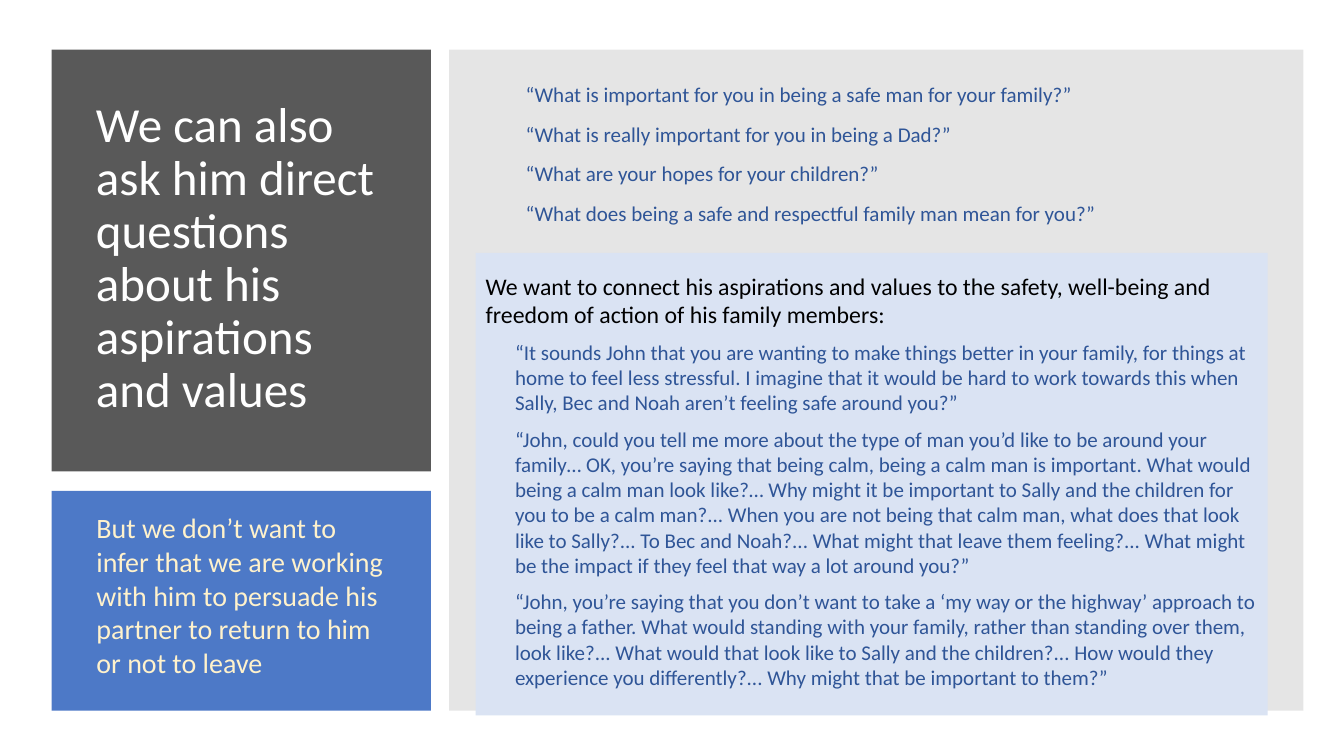
"""Build a slide on asking a man direct questions about his aspirations and values."""
from lxml import etree
from pptx import Presentation
from pptx.dml.color import RGBColor
from pptx.enum.shapes import MSO_SHAPE
from pptx.enum.text import MSO_ANCHOR
from pptx.oxml.ns import qn
from pptx.util import Cm, Pt

RECTANGLE = MSO_SHAPE.RECTANGLE
TOP, MIDDLE = MSO_ANCHOR.TOP, MSO_ANCHOR.MIDDLE

WHITE = RGBColor(0xFF, 0xFF, 0xFF)
BLACK = RGBColor(0x00, 0x00, 0x00)
CHARCOAL = RGBColor(0x59, 0x59, 0x59)
GREY = RGBColor(0x80, 0x80, 0x80)
BLUE = RGBColor(0x44, 0x72, 0xC4)
PALE_BLUE = RGBColor(0xDA, 0xE3, 0xF3)
DARK_BLUE = RGBColor(0x2F, 0x55, 0x97)
CREAM = RGBColor(0xFF, 0xF2, 0xCC)

TITLE = "We can also ask him direct questions about his aspirations and values"
CAUTION = (
    "But we don’t want to infer that we are working with him to persuade "
    "his partner to return to him or not to leave"
)
QUESTIONS = [
    "“What is important for you in being a safe man for your family?”",
    "“What is really important for you in being a Dad?”",
    "“What are your hopes for your children?”",
    "“What does being a safe and respectful family man mean for you?”",
]
PURPOSE = (
    "We want to connect his aspirations and values to the safety, well-being "
    "and freedom of action of his family members:"
)
EXAMPLES = [
    "“It sounds John that you are wanting to make things better in your family, "
    "for things at home to feel less stressful. I imagine that it would be hard to "
    "work towards this when Sally, Bec and Noah aren’t feeling safe around you?”",
    "“John, could you tell me more about the type of man you’d like to be around "
    "your family… OK, you’re saying that being calm, being a calm man is important. "
    "What would being a calm man look like?… Why might it be important to Sally and "
    "the children for you to be a calm man?... When you are not being that calm man, "
    "what does that look like to Sally?... To Bec and Noah?... What might that leave "
    "them feeling?... What might be the impact if they feel that way a lot around you?”",
    "“John, you’re saying that you don’t want to take a ‘my way or the highway’ "
    "approach to being a father. What would standing with your family, rather than "
    "standing over them, look like?... What would that look like to Sally and the "
    "children?... How would they experience you differently?... Why might that be "
    "important to them?”",
]

deck = Presentation()
deck.slide_width, deck.slide_height = Cm(33.87), Cm(19.05)
page = deck.slides.add_slide(deck.slide_layouts[6])


def add_panel(left, top, width, height, color, opacity=100):
    panel = page.shapes.add_shape(RECTANGLE, Cm(left), Cm(top), Cm(width), Cm(height))
    panel.shadow.inherit = False
    panel.line.fill.background()
    panel.fill.solid()
    panel.fill.fore_color.rgb = color
    if opacity < 100:
        tint = panel.fill._xPr.find(".//" + qn("a:srgbClr"))
        etree.SubElement(tint, qn("a:alpha")).set("val", str(opacity * 1000))


def add_text(left, top, width, height, lines, anchor=TOP, spacing=1.0, after=0):
    box = page.shapes.add_textbox(Cm(left), Cm(top), Cm(width), Cm(height))
    frame = box.text_frame
    frame.word_wrap = True
    frame.vertical_anchor = anchor
    for index, (text, size, color, indent) in enumerate(lines):
        para = frame.paragraphs[0] if index == 0 else frame.add_paragraph()
        para.line_spacing = spacing
        para.space_after = Pt(after)
        if indent:
            para._p.get_or_add_pPr().set("marL", str(Cm(indent)))
        span = para.add_run()
        span.text = text
        span.font.name = "Calibri"
        span.font.size = Pt(size)
        span.font.color.rgb = color


add_panel(1.3, 1.25, 9.56, 10.63, CHARCOAL)
add_text(2.17, 2.03, 7.9, 9, [(TITLE, 35, WHITE, 0)], MIDDLE, spacing=0.9)

add_panel(1.3, 12.37, 9.56, 5.54, BLUE, opacity=95)
add_panel(11.32, 1.25, 21.53, 16.66, GREY, opacity=20)

questions = [(question, 15, DARK_BLUE, 0) for question in QUESTIONS]
add_text(13, 0, 17.22, 7.82, questions, MIDDLE, spacing=0.9, after=12)

add_panel(11.99, 6.37, 19.96, 11.66, PALE_BLUE)
examples = [(example, 15, DARK_BLUE, 0.74) for example in EXAMPLES]
add_text(11.99, 6.71, 19.96, 11.32, [(PURPOSE, 17, BLACK, 0)] + examples, after=8)

add_text(2.18, 12.75, 7.87, 4.52, [(CAUTION, 20, CREAM, 0)])

deck.save("out.pptx")
